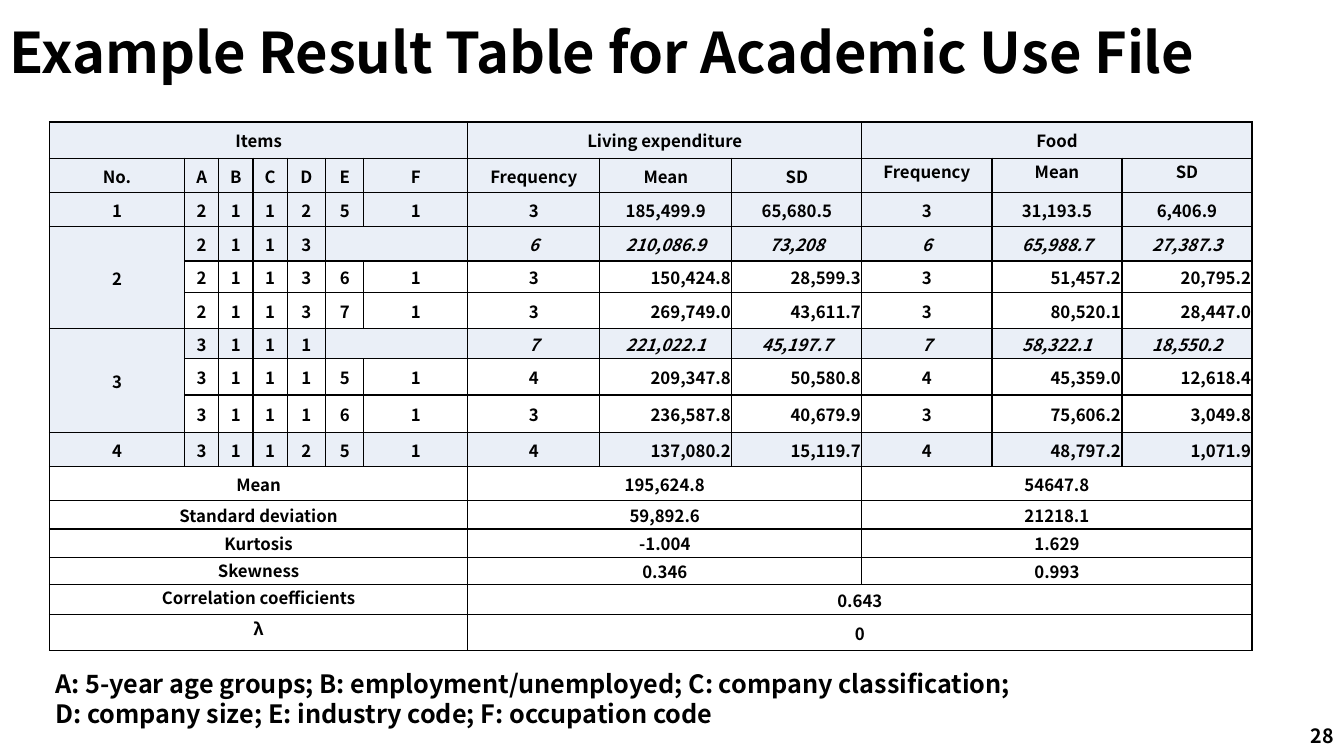
from lxml import etree
from pptx import Presentation
from pptx.dml.color import RGBColor
from pptx.enum.text import MSO_ANCHOR, PP_ALIGN
from pptx.oxml.ns import qn
from pptx.util import Pt

EMU_PER_PX = 9144  # 100 px to the inch
LEFT, CENTER, RIGHT, JUSTIFY = PP_ALIGN.LEFT, PP_ALIGN.CENTER, PP_ALIGN.RIGHT, PP_ALIGN.JUSTIFY
TOP, MIDDLE = MSO_ANCHOR.TOP, MSO_ANCHOR.MIDDLE
FONT = "Noto Sans CJK JP"
COLORS = {"text": "000000", "border": "000000", "shade": "EAEFF7"}
CELL_SIZE = 12

COLUMN_WIDTHS = [134] + [34] * 3 + [38] * 2 + [103] + [131] * 2 + [129] * 4
ROW_HEIGHTS = [36, 34, 34, 34, 31, 36, 30, 36, 37, 34, 34, 28, 28, 27, 30, 36]

# One line per table row; an empty field is blank or covered by a merged cell
ROWS = [line.split("|") for line in """\
Items|||||||Living expenditure|||Food||
No.|A|B|C|D|E|F|Frequency|Mean|SD|Frequency|Mean|SD
1|2|1|1|2|5|1|3|185,499.9|65,680.5|3|31,193.5|6,406.9
2|2|1|1|3|||6|210,086.9|73,208|6|65,988.7|27,387.3
|2|1|1|3|6|1|3|150,424.8|28,599.3|3|51,457.2|20,795.2
|2|1|1|3|7|1|3|269,749.0|43,611.7|3|80,520.1|28,447.0
3|3|1|1|1|||7|221,022.1|45,197.7|7|58,322.1|18,550.2
|3|1|1|1|5|1|4|209,347.8|50,580.8|4|45,359.0|12,618.4
|3|1|1|1|6|1|3|236,587.8|40,679.9|3|75,606.2|3,049.8
4|3|1|1|2|5|1|4|137,080.2|15,119.7|4|48,797.2|1,071.9
Mean|||||||195,624.8|||54647.8||
Standard deviation|||||||59,892.6|||21218.1||
Kurtosis|||||||-1.004|||1.629||
Skewness|||||||0.346|||0.993||
Correlation coefficients|||||||0.643|||||
λ|||||||0|||||""".split("\n")]

SUBTOTAL_ROWS = {3, 6}
SHADED_ROWS = {0, 1, 2, 9} | SUBTOTAL_ROWS
RIGHT_ROWS = {4, 5, 7, 8, 9}
VALUE_COLUMNS = {8, 9, 11, 12}
FIRST_SUMMARY_ROW = 10
FIRST_RESULT_COLUMN, FIRST_FOOD_COLUMN = 7, 10

# Merged areas: row, column, row count, column count
SPANS = [(row, 0, 1, 7) for row in (0, *range(10, 16))]
SPANS += [(row, column, 1, 3) for row in (0, *range(10, 14)) for column in (7, 10)]
SPANS += [(row, 7, 1, 6) for row in (14, 15)]
SPANS += [(row, 0, 3, 1) for row in SUBTOTAL_ROWS]
SPANS += [(row, 5, 1, 2) for row in SUBTOTAL_ROWS]


def px(length):
    return length * EMU_PER_PX


class SlideBuilder:
    def __init__(self, slide):
        self.slide = slide

    def add_run(self, paragraph, text, size, italic=False):
        run = paragraph.add_run()
        run.text = text
        run.font.name = FONT
        run.font.size = Pt(size)
        run.font.bold = True
        run.font.italic = italic
        run.font.color.rgb = RGBColor.from_string(COLORS["text"])

    def add_text(self, box, lines, size, align=LEFT, anchor=MIDDLE, spacing=None):
        shape = self.slide.shapes.add_textbox(*map(px, box))
        frame = shape.text_frame
        frame.word_wrap = True
        frame.vertical_anchor = anchor
        for index, line in enumerate(lines):
            paragraph = frame.add_paragraph() if index else frame.paragraphs[0]
            paragraph.alignment = align
            paragraph.line_spacing = spacing
            self.add_run(paragraph, line, size)

    def add_borders(self, cell):
        properties = cell._tc.get_or_add_tcPr()
        for side in ("lnL", "lnR", "lnT", "lnB"):
            line = etree.SubElement(properties, qn(f"a:{side}"), w=str(Pt(1)))
            fill = etree.SubElement(line, qn("a:solidFill"))
            etree.SubElement(fill, qn("a:srgbClr"), val=COLORS["border"])

    def fill_cell(self, cell, text, align, anchor, shaded, italic):
        cell.margin_left = cell.margin_right = cell.margin_top = px(1)
        cell.margin_bottom = 0
        cell.vertical_anchor = anchor
        self.add_borders(cell)
        if shaded:
            cell.fill.solid()
            cell.fill.fore_color.rgb = RGBColor.from_string(COLORS["shade"])
        else:
            cell.fill.background()
        paragraph = cell.text_frame.paragraphs[0]
        paragraph.alignment = align
        if text:
            self.add_run(paragraph, text, CELL_SIZE, italic)
        else:  # keeps empty cells from stretching their row
            etree.SubElement(paragraph._p, qn("a:endParaRPr"), sz=str(CELL_SIZE * 100))

    def add_result_table(self, box):
        table = self.slide.shapes.add_table(len(ROWS), len(COLUMN_WIDTHS), *map(px, box)).table
        table.first_row = table.horz_banding = False
        for column, width in zip(table.columns, COLUMN_WIDTHS):
            column.width = px(width)
        for row, height in zip(table.rows, ROW_HEIGHTS):
            row.height = px(height)
        for r, texts in enumerate(ROWS):
            for c, text in enumerate(texts):
                numeric = r in RIGHT_ROWS and c in VALUE_COLUMNS
                at_top = (r == 1 and c >= FIRST_FOOD_COLUMN) or (r >= 13 and c == 0)
                self.fill_cell(
                    table.cell(r, c), text,
                    align=RIGHT if numeric else CENTER,
                    anchor=TOP if at_top else MIDDLE,
                    shaded=r in SHADED_ROWS or (c == 0 and r < FIRST_SUMMARY_ROW),
                    italic=r in SUBTOTAL_ROWS and c >= FIRST_RESULT_COLUMN,
                )
        for r, c, height, width in SPANS:
            table.cell(r, c).merge(table.cell(r + height - 1, c + width - 1))


def main():
    presentation = Presentation()
    presentation.slide_width, presentation.slide_height = px(1333), px(750)
    builder = SlideBuilder(presentation.slides.add_slide(presentation.slide_layouts[6]))

    # Page number and title
    builder.add_text((1033, 710, 300, 40), ["28"], 14, align=RIGHT)
    builder.add_text((0, 0, 1333, 109), ["Example Result Table for Academic Use File"], 40, spacing=0.9)

    # Results
    builder.add_result_table((49, 121, 1192, 523))

    # Key to the column letters
    builder.add_text((45, 658, 1203, 71), [
        "A: 5-year age groups; B: employment/unemployed; C: company classification;",
        "D: company size; E: industry code; F: occupation code",
    ], 18, align=JUSTIFY, anchor=TOP)

    presentation.save("out.pptx")


if __name__ == "__main__":
    main()
